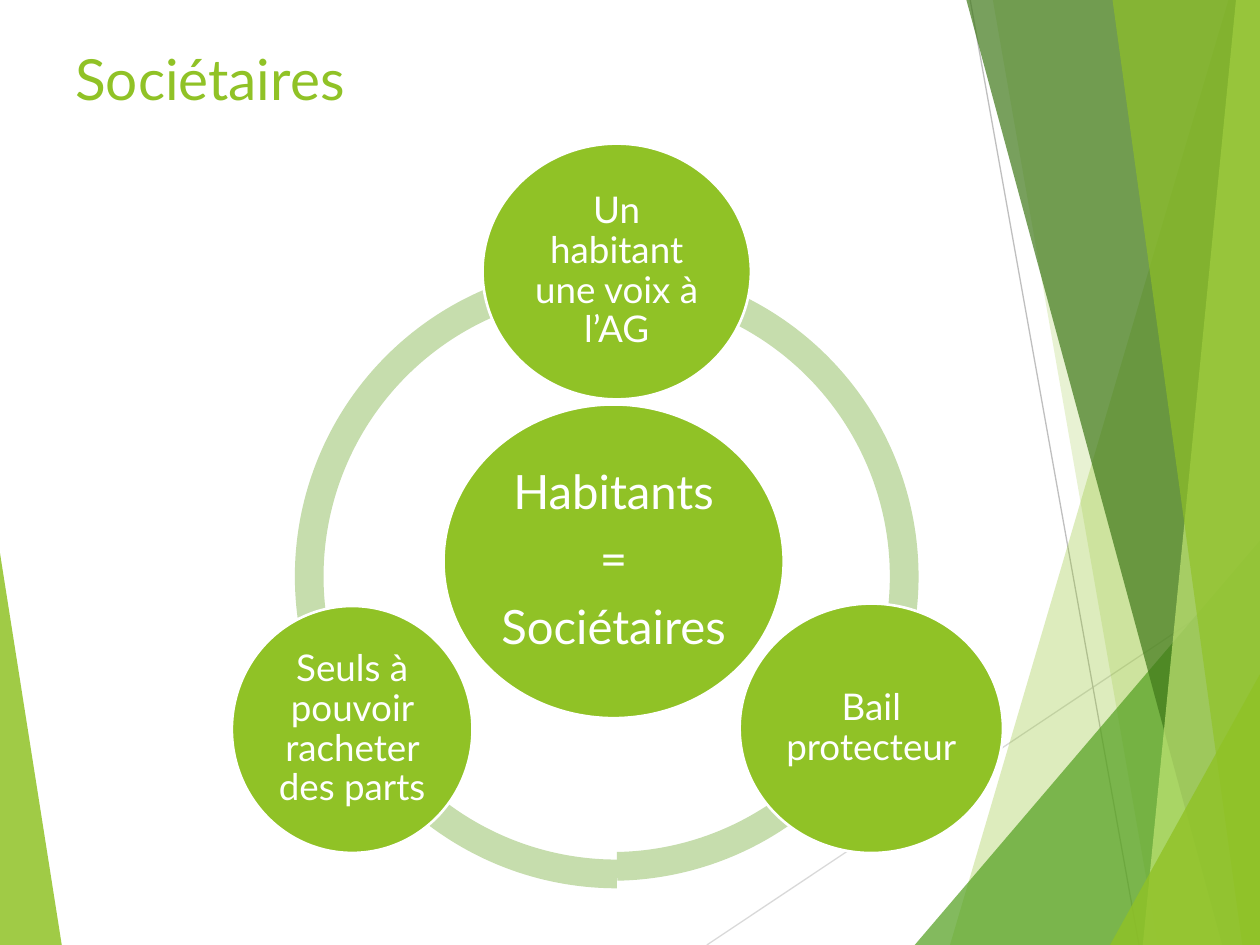
from lxml import etree
from pptx import Presentation
from pptx.dml.color import RGBColor
from pptx.enum import shapes, text
from pptx.oxml.ns import qn
from pptx.util import Inches, Pt

LIME = RGBColor(0x90, 0xC2, 0x26)
GREEN = RGBColor(0x54, 0xA0, 0x21)
FOREST = RGBColor(0x3F, 0x78, 0x19)
PALE_LIME = RGBColor(0xC0, 0xE4, 0x74)
SAGE = RGBColor(0xC6, 0xDD, 0xAD)
LIGHT_GREY = RGBColor(0xD9, 0xD9, 0xD9)
GREY = RGBColor(0xBF, 0xBF, 0xBF)
WHITE = RGBColor(0xFF, 0xFF, 0xFF)
FONT = "Lato"


def paint(shape, color, opacity=100):
    """Give a shape a flat fill, without outline or shadow."""
    shape.shadow.inherit = False
    shape.fill.solid()
    shape.fill.fore_color.rgb = color
    shape.line.fill.background()
    if opacity < 100:
        fill = shape.fill._xPr.find(qn("a:solidFill"))
        etree.SubElement(fill[0], qn("a:alpha"), val=str(opacity * 1000))


def add_span(para, words, size, color):
    """Add one formatted run to a paragraph."""
    span = para.add_run()
    span.text = words
    span.font.name = FONT
    span.font.size = Pt(size)
    span.font.color.rgb = color


def add_ray(page, start, end, color):
    """Draw a thin straight line."""
    ray = page.shapes.add_connector(
        shapes.MSO_CONNECTOR.STRAIGHT, *map(Inches, start + end))
    ray.line.color.rgb = color
    ray.line.width = Pt(0.75)
    etree.SubElement(ray._element.spPr, qn("a:effectLst"))


def add_facet(page, corners, color, opacity):
    """Draw a translucent polygon."""
    points = [(Inches(x), Inches(y)) for x, y in corners]
    builder = page.shapes.build_freeform(*points[0], scale=1.0)
    builder.add_line_segments(points[1:], close=True)
    paint(builder.convert_to_shape(), color, opacity)


def add_backdrop(page, left, top, width, height):
    """Draw the facets and rays along the page edges."""
    right, bottom = left + width, top + height
    add_facet(page, [(left, top + 4.39), (left + 0.49, bottom), (left, bottom)], LIME, 85)
    add_ray(page, (left + 5.61, bottom), (right, top + 4.57), LIGHT_GREY)
    add_ray(page, (left + 7.7, top), (left + 9.04, bottom), GREY)
    facets = [
        (9.75, 0, 7.54, LIME, 30),
        (7.88, 0, 9.19, LIME, 20),
        (10, 4.29, 7.26, GREEN, 72),
        (7.67, 0, 9.7, FOREST, 70),
        (9.81, 0, 9.07, PALE_LIME, 70),
        (8.83, 0, 9.86, LIME, 65),
        (10, 5.35, 8.81, LIME, 80),
    ]
    for upper, drop, lower, color, opacity in facets:
        corners = [(left + upper, top + drop), (left + lower, bottom),
                   (right, bottom), (right, top + drop)]
        add_facet(page, list(dict.fromkeys(corners)), color, opacity)


def add_title(page, left, top, width, height):
    """Write the page title."""
    box = page.shapes.add_textbox(*map(Inches, (left, top, width, height)))
    frame = box.text_frame
    frame.word_wrap = True
    frame.vertical_anchor = text.MSO_ANCHOR.MIDDLE
    add_span(frame.paragraphs[0], "Sociétaires", 32.4, LIME)


def add_arc(page, left, top, size, start, end):
    """Draw one ring segment between two angles in degrees."""
    arc = page.shapes.add_shape(
        shapes.MSO_SHAPE.BLOCK_ARC, *map(Inches, (left, top, size, size)))
    for index, value in enumerate((start * 0.6, end * 0.6, 0.046)):
        arc.adjustments[index] = value
    paint(arc, SAGE)


def add_bubble(page, left, top, width, height, lines, size, inset):
    """Draw an ellipse with centred white text."""
    bubble = page.shapes.add_shape(
        shapes.MSO_SHAPE.OVAL, *map(Inches, (left, top, width, height)))
    paint(bubble, LIME)
    bubble.line.color.rgb = WHITE
    bubble.line.width = Pt(1.5)
    frame = bubble.text_frame
    frame.word_wrap = True
    frame.vertical_anchor = text.MSO_ANCHOR.MIDDLE
    frame.margin_left = frame.margin_right = Inches(inset)
    frame.margin_top = frame.margin_bottom = Inches(inset)
    for index, line in enumerate(lines):
        para = frame.add_paragraph() if index else frame.paragraphs[0]
        para.alignment = text.PP_ALIGN.CENTER
        para.line_spacing = 0.9
        para.space_after = Pt(size * 0.35)
        add_span(para, line, size, WHITE)


def add_cycle(page, left, top):
    """Draw the ring, its hub and the three bubbles around it."""
    for x, y, start, end in [(0.58, 0.96, 90, 162), (0.54, 0.9, 18.97, 88.97),
                             (0.5, 0.96, 163.05, 17.96)]:
        add_arc(page, left + x, top + y, 4.95, start, end)
    add_bubble(page, left + 1.68, top + 2.07, 2.7, 2.49,
               ["Habitants", "=", "Sociétaires"], 27, 0.04)
    satellites = [
        (1.99, 0, 2.13, 2.03, "Un habitant une voix à l’AG"),
        (4.03, 3.65, 2.09, 1.98, "Bail protecteur"),
        (0, 3.67, 1.91, 1.96, "Seuls à pouvoir racheter des parts"),
    ]
    for x, y, width, height, words in satellites:
        add_bubble(page, left + x, top + y, width, height, [words], 21, 0.03)


def main():
    """Build the deck and save it."""
    deck = Presentation()
    deck.slide_width, deck.slide_height = Inches(10), Inches(7.5)
    page = deck.slides.add_slide(deck.slide_layouts[6])
    add_backdrop(page, 0, 0, 10, 7.5)
    add_title(page, 0.5, 0.3, 8.17, 0.64)
    add_cycle(page, 1.84, 1.14)
    deck.save("out.pptx")


if __name__ == "__main__":
    main()
